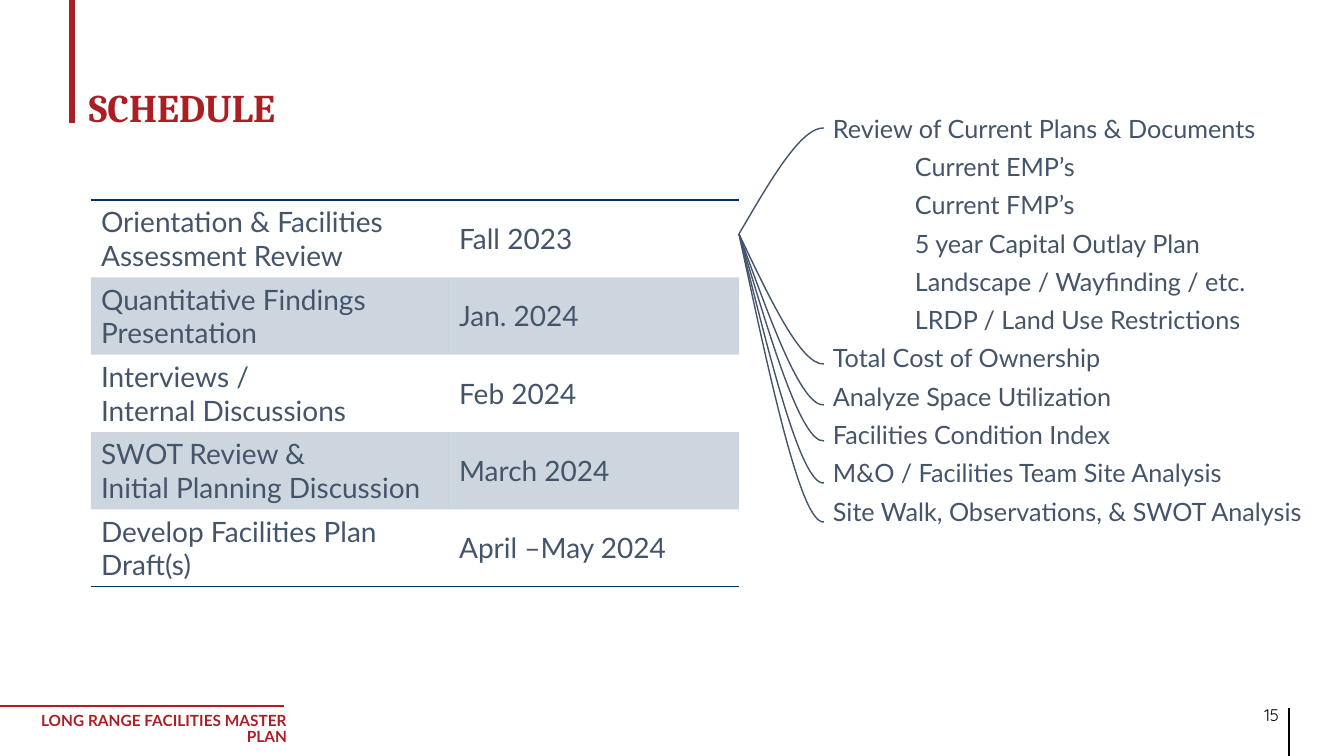
from lxml import etree
from pptx import Presentation
from pptx.dml.color import RGBColor
from pptx.enum.shapes import MSO_CONNECTOR
from pptx.enum.text import MSO_ANCHOR, PP_ALIGN
from pptx.oxml.ns import qn
from pptx.util import Pt

STRAIGHT = MSO_CONNECTOR.STRAIGHT
MIDDLE = MSO_ANCHOR.MIDDLE
LEFT, RIGHT = PP_ALIGN.LEFT, PP_ALIGN.RIGHT

EMU_PER_PX = 914400 / 100.8
PLAIN_TABLE_STYLE = "{2D5ABB26-0587-4C30-8999-92F81FD0307C}"
COLORS = {
    "red": "AB1E23",
    "slate": "44546A",
    "navy": "08335E",
    "black": "000000",
}

SCHEDULE = [
    (["Orientation & Facilities Assessment Review"], "Fall 2023"),
    (["Quantitative Findings Presentation"], "Jan. 2024"),
    (["Interviews /", "Internal Discussions"], "Feb 2024"),
    (["SWOT Review &", "Initial Planning Discussion"], "March 2024"),
    (["Develop Facilities Plan Draft(s)"], "April –May 2024"),
]
# Review tasks as (text, indent in px)
TASKS = [
    ("Review of Current Plans & Documents", 0),
    ("Current EMP’s", 82),
    ("Current FMP’s", 82),
    ("5 year Capital Outlay Plan", 82),
    ("Landscape / Wayfinding / etc.", 82),
    ("LRDP / Land Use Restrictions", 82),
    ("Total Cost of Ownership", 0),
    ("Analyze Space Utilization", 0),
    ("Facilities Condition Index", 0),
    ("M&O / Facilities Team Site Analysis", 0),
    ("Site Walk, Observations, & SWOT Analysis", 0),
]
BRANCH_START = (739, 234)
BRANCH_END_X = 824
BRANCH_END_YS = [128, 364, 405, 441, 483, 522]


def px(length):
    return round(length * EMU_PER_PX)


def color(name):
    return RGBColor.from_string(COLORS[name])


def write_paragraph(paragraph, text, size=18, font="Lato", fill="slate",
                    bold=False, align=LEFT, spacing=1.0, before=0, indent=0):
    paragraph.alignment = align
    paragraph.line_spacing = spacing
    paragraph.space_before = Pt(before)
    if indent:
        paragraph._p.get_or_add_pPr().set("marL", str(px(indent)))
    run = paragraph.add_run()
    run.text = text
    run.font.size = Pt(size)
    run.font.name = font
    run.font.bold = bold
    run.font.color.rgb = color(fill)


def next_paragraph(frame, index):
    return frame.add_paragraph() if index else frame.paragraphs[0]


def add_text_frame(slide, left, top, width, height):
    box = slide.shapes.add_textbox(px(left), px(top), px(width), px(height))
    box.text_frame.word_wrap = True
    return box.text_frame


def add_label(slide, area, text, **style):
    write_paragraph(add_text_frame(slide, *area).paragraphs[0], text, **style)


def add_rule(slide, start, end, line_color, width):
    rule = slide.shapes.add_connector(
        STRAIGHT, px(start[0]), px(start[1]), px(end[0]), px(end[1]))
    rule.line.color.rgb = color(line_color)
    rule.line.width = Pt(width)
    etree.SubElement(rule._element.spPr, qn("a:effectLst"))


def add_branch(slide, end_y):
    """Cubic curve that leaves steeply and settles level at its task."""
    x, y = BRANCH_START
    rise = end_y - y
    builder = slide.shapes.build_freeform(px(x), px(y))
    builder.add_line_segments(
        [(px(x + 31), px(y + rise * 0.5)),
         (px(x + 62), px(y + rise * 1.01)),
         (px(BRANCH_END_X), px(end_y))], close=False)
    branch = builder.convert_to_shape()
    # Join the three segments into one Bezier curve
    outline = branch._element.spPr.find(".//" + qn("a:path"))
    segments = outline.findall(qn("a:lnTo"))
    curve = etree.SubElement(outline, qn("a:cubicBezTo"))
    for segment in segments:
        curve.append(segment[0])
        outline.remove(segment)
    branch.shadow.inherit = False
    branch.fill.background()
    branch.line.color.rgb = color("slate")
    branch.line.width = Pt(1)


def add_cell_border(cell, side):
    border = etree.Element(qn(f"a:ln{side}"), w=str(Pt(1)))
    fill = etree.SubElement(border, qn("a:solidFill"))
    etree.SubElement(fill, qn("a:srgbClr"), val=COLORS["navy"])
    cell._tc.get_or_add_tcPr().insert(0, border)


def fill_cell(cell, shaded):
    if not shaded:
        cell.fill.background()
        return
    cell.fill.solid()
    cell.fill.fore_color.rgb = color("navy")
    tint = cell._tc.tcPr.find(".//" + qn("a:srgbClr"))
    etree.SubElement(tint, qn("a:alpha"), val="20000")


def add_schedule_table(slide):
    table = slide.shapes.add_table(
        len(SCHEDULE), 2, px(91), px(200), px(648), px(385)).table
    table.first_row = False
    table.horz_banding = False
    table._tbl.tblPr.find(qn("a:tableStyleId")).text = PLAIN_TABLE_STYLE
    for column, width in zip(table.columns, (358, 290)):
        column.width = px(width)
    for row, (phase, date) in enumerate(SCHEDULE):
        for column, lines in enumerate((phase, [date])):
            cell = table.cell(row, column)
            cell.vertical_anchor = MIDDLE
            for index, line in enumerate(lines):
                write_paragraph(next_paragraph(cell.text_frame, index), line, size=20)
            fill_cell(cell, shaded=row % 2 == 1)
            if row == 0:
                add_cell_border(cell, "T")
            if row == len(SCHEDULE) - 1:
                add_cell_border(cell, "B")


def add_task_list(slide):
    frame = add_text_frame(slide, 822, 105, 522, 432)
    frame.margin_left = frame.margin_right = px(11)
    for index, (text, indent) in enumerate(TASKS):
        write_paragraph(next_paragraph(frame, index), text, spacing=1.1,
                        before=3.6 if index else 0, indent=indent)


def main():
    presentation = Presentation()
    presentation.slide_width = px(1344)
    presentation.slide_height = px(756)
    slide = presentation.slides.add_slide(presentation.slide_layouts[6])

    # Title
    add_label(slide, (79, 78, 731, 57), "SCHEDULE",
              size=28, font="Cambria", fill="red", bold=True)
    add_rule(slide, (72, 123), (72, -1), "red", 4.5)

    # Footer
    add_rule(slide, (1289, 756), (1289, 708), "black", 2)
    add_label(slide, (1190, 700, 99, 30), "15",
              size=12, font="Quicksand", fill="black", align=RIGHT)
    add_label(slide, (0, 708, 297, 35), "LONG RANGE FACILITIES MASTER PLAN",
              size=11, fill="red", bold=True, align=RIGHT, spacing=0.9)
    add_rule(slide, (0, 706), (284, 706), "red", 1.5)

    # Schedule and the tasks of its first phase
    add_task_list(slide)
    add_schedule_table(slide)
    for end_y in BRANCH_END_YS:
        add_branch(slide, end_y)

    presentation.save("out.pptx")


if __name__ == "__main__":
    main()
